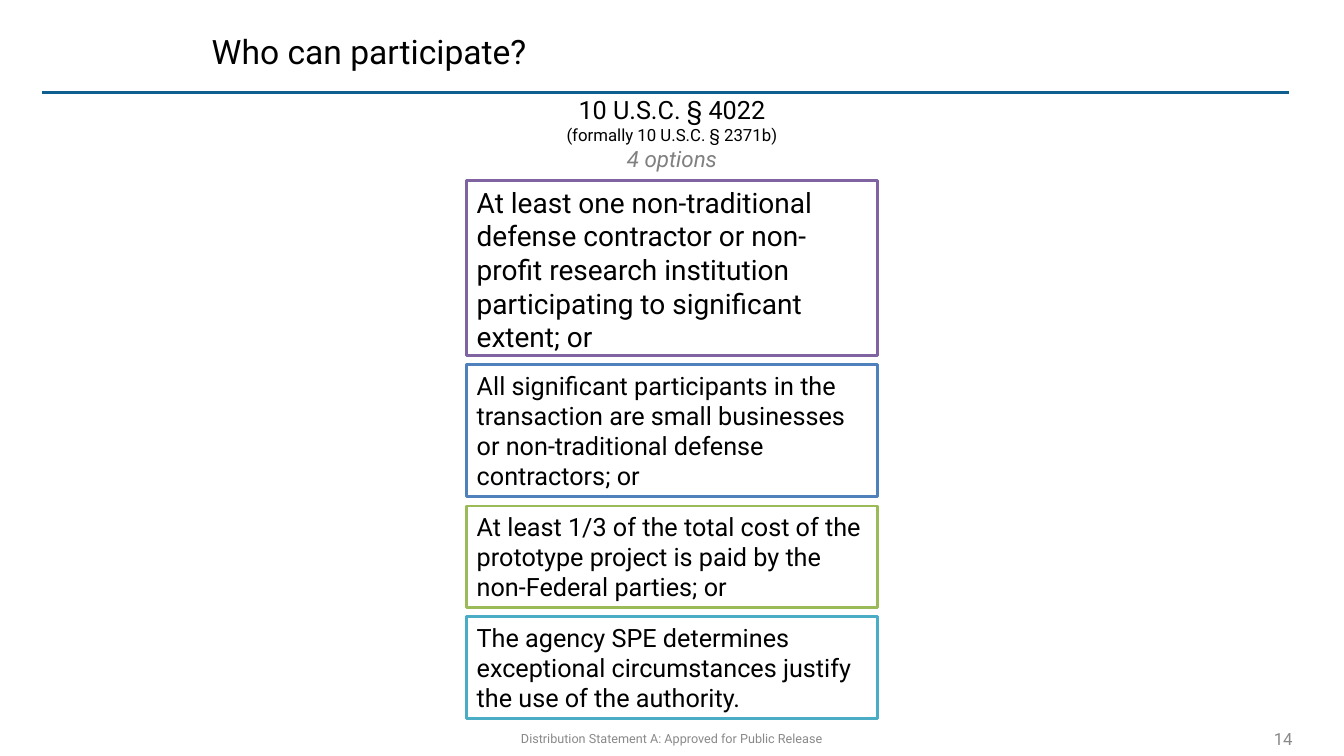
import pptx
import pptx.dml.color
import pptx.enum.shapes
import pptx.enum.text
import pptx.oxml
import pptx.util

RGBColor = pptx.dml.color.RGBColor
ALIGN = pptx.enum.text.PP_ALIGN
ANCHOR = pptx.enum.text.MSO_ANCHOR

BLACK = RGBColor(0x00, 0x00, 0x00)
WHITE = RGBColor(0xFF, 0xFF, 0xFF)
GRAY = RGBColor(0x80, 0x80, 0x80)
FOOTER_GRAY = RGBColor(0x89, 0x89, 0x89)
RULE_BLUE = RGBColor(0x0F, 0x5E, 0x90)
PURPLE = RGBColor(0x80, 0x64, 0xA2)
BLUE = RGBColor(0x4F, 0x81, 0xBD)
GREEN = RGBColor(0x9B, 0xBB, 0x59)
TEAL = RGBColor(0x4B, 0xAC, 0xC6)

EMU_PER_PX = 9144
COLUMN_LEFT, COLUMN_WIDTH = 463, 407
OPTIONS_TOP, OPTION_GAP = 179, 9
OPTIONS = [
    ("At least one non-traditional defense contractor or non-profit research "
     "institution participating to significant extent; or", 174, 20, PURPLE),
    ("All significant participants in the transaction are small businesses "
     "or non-traditional defense contractors; or", 131, 18, BLUE),
    ("At least 1/3 of the total cost of the prototype project is paid by the "
     "non-Federal parties; or", 101, 18, GREEN),
    ("The agency SPE determines exceptional circumstances justify the use of "
     "the authority.", 101, 18, TEAL),
]


def px(*lengths):
    return [pptx.util.Emu(length * EMU_PER_PX) for length in lengths]


class SlideBuilder:
    font = "Roboto"

    def __init__(self, slide):
        self.slide = slide

    def set_lines(self, shape, lines, align, anchor):
        frame = shape.text_frame
        frame.word_wrap = True
        frame.auto_size = pptx.enum.text.MSO_AUTO_SIZE.NONE
        frame.vertical_anchor = anchor
        frame.text = "\n".join(line[0] for line in lines)
        for paragraph, (_, size, color, italic) in zip(frame.paragraphs, lines):
            paragraph.alignment = align
            for run in paragraph.runs:
                run.font.name = self.font
                run.font.size = pptx.util.Pt(size)
                run.font.color.rgb = color
                run.font.italic = italic

    def title(self, text, box):
        shape = self.slide.shapes.title
        shape.left, shape.top, shape.width, shape.height = px(*box)
        self.set_lines(shape, [(text, 24, BLACK, False)], ALIGN.LEFT, ANCHOR.MIDDLE)

    def text(self, lines, box, align, anchor=ANCHOR.MIDDLE):
        shape = self.slide.shapes.add_textbox(*px(*box))
        self.set_lines(shape, lines, align, anchor)

    def option(self, text, box, size, color):
        shape = self.slide.shapes.add_shape(
            pptx.enum.shapes.MSO_SHAPE.RECTANGLE, *px(*box))
        shape.shadow.inherit = False
        shape.fill.solid()
        shape.fill.fore_color.rgb = WHITE
        shape.line.color.rgb = color
        shape.line.width = pptx.util.Pt(2)
        self.set_lines(shape, [(text, size, BLACK, False)], ALIGN.LEFT, ANCHOR.TOP)

    def rule(self, start, end):
        connector = self.slide.shapes.add_connector(
            pptx.enum.shapes.MSO_CONNECTOR.STRAIGHT, *px(*start, *end))
        connector.line.color.rgb = RULE_BLUE
        connector.line.width = pptx.util.Pt(1.75)
        connector._element.spPr.append(pptx.oxml.parse_xml(
            '<a:effectLst xmlns:a='
            '"http://schemas.openxmlformats.org/drawingml/2006/main"/>'))


def main():
    presentation = pptx.Presentation()
    presentation.slide_width, presentation.slide_height = px(1333, 750)
    title_only = presentation.slide_layouts[5]
    builder = SlideBuilder(presentation.slides.add_slide(title_only))

    builder.title("Who can participate?", (200, 17, 1078, 67))
    builder.rule((42, 92), (1278, 92))
    builder.text([
        ("10 U.S.C. § 4022", 18, BLACK, False),
        ("(formally 10 U.S.C. § 2371b)", 12, BLACK, False),
        ("4 options", 16, GRAY, True),
    ], (COLUMN_LEFT, 89, COLUMN_WIDTH, 88), ALIGN.CENTER, ANCHOR.TOP)

    top = OPTIONS_TOP
    for text, height, size, color in OPTIONS:
        builder.option(text, (COLUMN_LEFT, top, COLUMN_WIDTH, height), size, color)
        top += height + OPTION_GAP

    builder.text(
        [("Distribution Statement A: Approved for Public Release", 9, FOOTER_GRAY, False)],
        (312, 716, 708, 33), ALIGN.CENTER)
    builder.text([("14", 12, FOOTER_GRAY, False)], (1181, 717, 111, 32), ALIGN.RIGHT)

    presentation.save("out.pptx")


if __name__ == "__main__":
    main()
